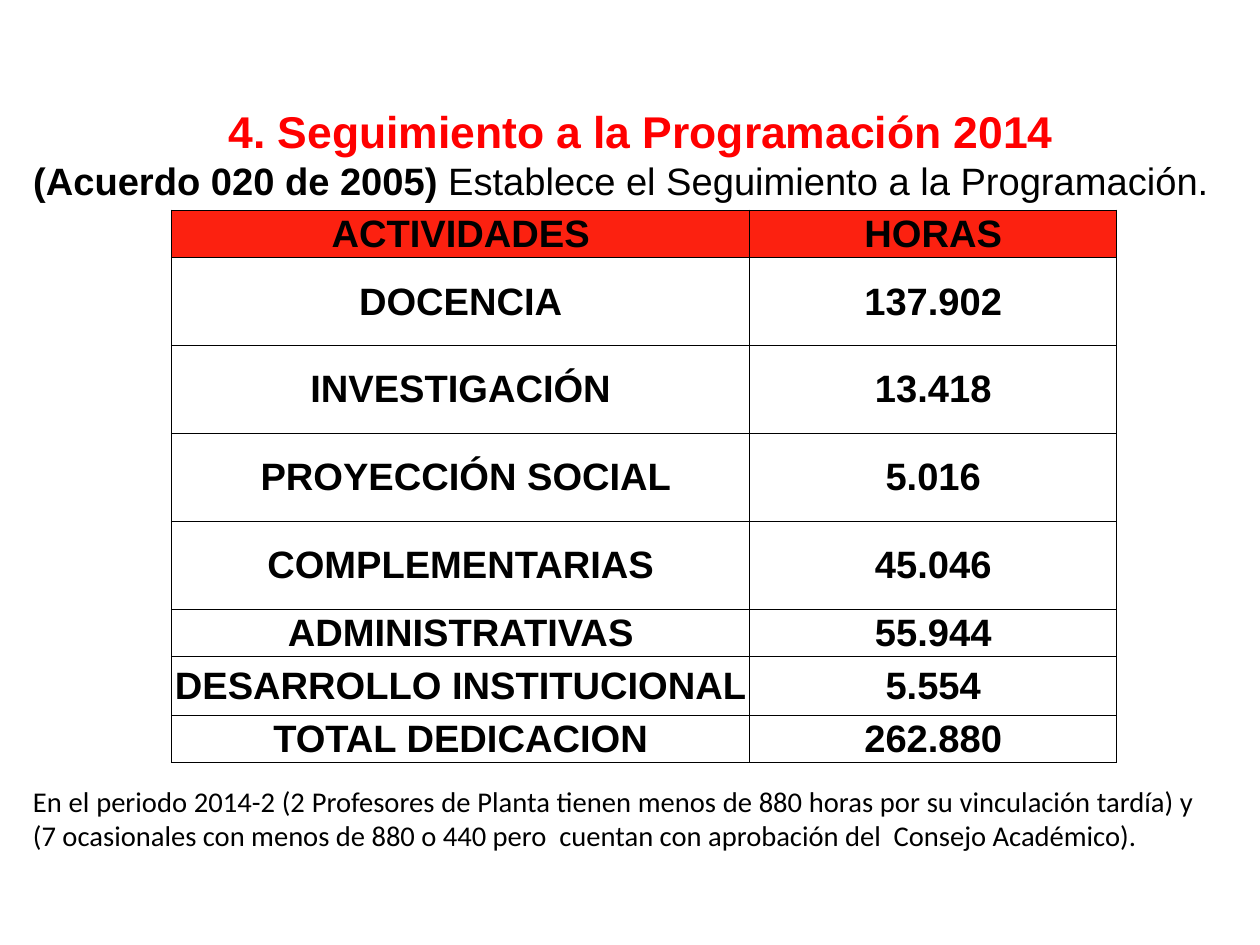
from dataclasses import dataclass

from lxml.etree import SubElement
from pptx import Presentation
from pptx.dml.color import RGBColor
from pptx.enum.text import MSO_ANCHOR as Anchor, MSO_AUTO_SIZE as AutoSize, PP_ALIGN as Align
from pptx.oxml.ns import qn
from pptx.util import Inches, Pt

TITLE = "4. Seguimiento a la Programación 2014"
AGREEMENT = "(Acuerdo 020 de 2005)"
AGREEMENT_DETAIL = " Establece el Seguimiento a la Programación."
NOTE = (
    "En el periodo 2014-2 (2 Profesores de Planta tienen menos de 880 horas por su "
    "vinculación tardía) y (7 ocasionales con menos de 880 o 440 pero  cuentan con "
    "aprobación del  Consejo Académico)."
)
# Activity, hours, row height in inches
ROWS = [
    ("ACTIVIDADES", "HORAS", 0.41),
    ("DOCENCIA", "137.902", 0.77),
    ("INVESTIGACIÓN", "13.418", 0.77),
    (" PROYECCIÓN SOCIAL", "5.016", 0.77),
    ("COMPLEMENTARIAS", "45.046", 0.77),
    ("ADMINISTRATIVAS", "55.944", 0.41),
    ("DESARROLLO INSTITUCIONAL", "5.554", 0.52),
    ("TOTAL DEDICACION", "262.880", 0.41),
]
COLUMN_WIDTHS = (5.06, 3.21)
CM_PER_INCH = 2.54
SLIDE_WIDTH, SLIDE_HEIGHT = 28 / CM_PER_INCH, 21 / CM_PER_INCH


@dataclass(frozen=True)
class Theme:
    black: str = "000000"
    title_red: str = "FF0000"
    header_red: str = "FC2110"
    heading_font: str = "Arial"
    note_font: str = "Calibri"
    title_size: float = 28
    text_size: float = 24
    note_size: float = 18
    outer_line: float = 1
    inner_line: float = 0.5


THEME = Theme()


def add_run(paragraph, text, size=THEME.text_size, color=THEME.black,
            font=THEME.heading_font, bold=True):
    run = paragraph.add_run()
    run.text = text
    run.font.name = font
    run.font.size = Pt(size)
    run.font.bold = bold
    run.font.color.rgb = RGBColor.from_string(color)


def place(shape, left, top, width, height):
    shape.left, shape.top = Inches(left), Inches(top)
    shape.width, shape.height = Inches(width), Inches(height)


def prepare_frame(shape):
    frame = shape.text_frame
    frame.word_wrap = True
    frame.auto_size = AutoSize.SHAPE_TO_FIT_TEXT
    frame.vertical_anchor = Anchor.TOP
    return frame


def set_borders(cell, edges):
    """Draw each side of a cell; edges maps L, R, T, B to whether it is an outer side."""
    properties = cell._tc.get_or_add_tcPr()
    for side, is_outer in edges.items():
        width = THEME.outer_line if is_outer else THEME.inner_line
        line = SubElement(properties, qn(f"a:ln{side}"), w=str(Pt(width)))
        fill = SubElement(line, qn("a:solidFill"))
        SubElement(fill, qn("a:srgbClr"), val=THEME.black)


def add_heading(slide):
    title = slide.shapes.title
    place(title, 0.19, 0.86, 10.83, 0.98)
    frame = prepare_frame(title)
    heading = frame.paragraphs[0]
    heading.alignment = Align.CENTER
    add_run(heading, TITLE, size=THEME.title_size, color=THEME.title_red)
    agreement = frame.add_paragraph()
    agreement.alignment = Align.JUSTIFY
    add_run(agreement, AGREEMENT)
    add_run(agreement, AGREEMENT_DETAIL, bold=False)


def add_hours_table(slide):
    last_row, last_column = len(ROWS) - 1, len(COLUMN_WIDTHS) - 1
    height = sum(row[-1] for row in ROWS)
    table = slide.shapes.add_table(
        len(ROWS), len(COLUMN_WIDTHS), Inches(1.5), Inches(1.84),
        Inches(sum(COLUMN_WIDTHS)), Inches(height)).table
    table.first_row = table.horz_banding = False
    for column, width in zip(table.columns, COLUMN_WIDTHS):
        column.width = Inches(width)
    for i, (*texts, row_height) in enumerate(ROWS):
        table.rows[i].height = Inches(row_height)
        for j, text in enumerate(texts):
            cell = table.cell(i, j)
            cell.margin_left = cell.margin_right = cell.margin_top = Inches(0.01)
            cell.margin_bottom = 0
            cell.vertical_anchor = Anchor.MIDDLE
            set_borders(cell, {"L": j == 0, "R": j == last_column,
                               "T": i == 0, "B": i == last_row})
            if i == 0:
                cell.fill.solid()
                cell.fill.fore_color.rgb = RGBColor.from_string(THEME.header_red)
            else:
                cell.fill.background()
            paragraph = cell.text_frame.paragraphs[0]
            paragraph.alignment = Align.CENTER
            add_run(paragraph, text)


def add_note(slide):
    box = slide.shapes.add_textbox(Inches(0.19), Inches(6.81), Inches(10.36), Inches(1.01))
    paragraph = prepare_frame(box).paragraphs[0]
    paragraph.alignment = Align.JUSTIFY
    add_run(paragraph, NOTE, size=THEME.note_size, font=THEME.note_font, bold=False)


def main():
    presentation = Presentation()
    presentation.slide_width = Inches(SLIDE_WIDTH)
    presentation.slide_height = Inches(SLIDE_HEIGHT)
    slide = presentation.slides.add_slide(presentation.slide_layouts[5])
    add_heading(slide)
    add_hours_table(slide)
    add_note(slide)
    presentation.save("out.pptx")


if __name__ == "__main__":
    main()
